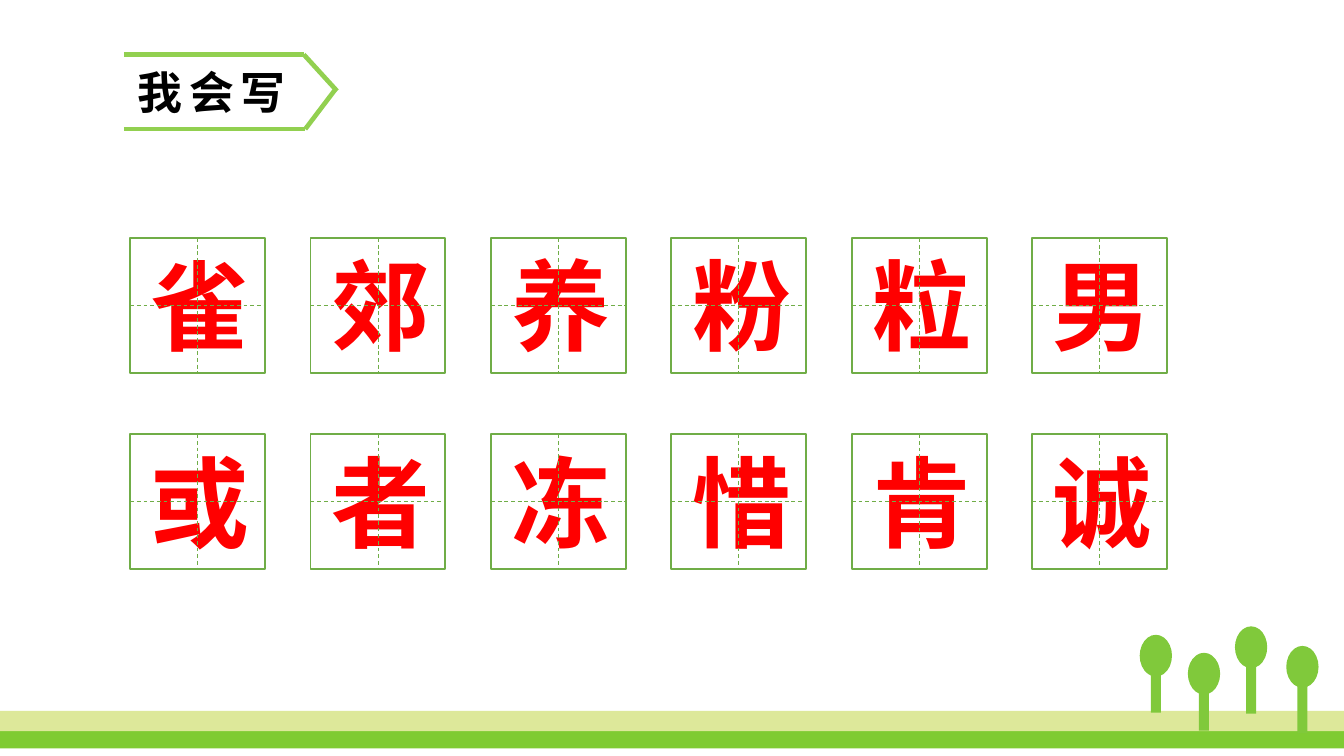
from pptx import Presentation
from pptx.dml.color import RGBColor
from pptx.enum.dml import MSO_LINE
from pptx.enum.shapes import MSO_CONNECTOR, MSO_SHAPE
from pptx.enum.text import MSO_ANCHOR, MSO_AUTO_SIZE, PP_ALIGN
from pptx.oxml.ns import qn
from pptx.util import Cm, Pt
from lxml.etree import SubElement

COLORS = {
    "grass": "7FCB32",
    "meadow": "DDE89A",
    "tree": "80C93B",
    "banner": "92D050",
    "grid": "70AD47",
    "character": "FF0000",
    "title": "000000",
    "white": "FFFFFF",
}
FONT = "Noto Sans CJK SC"


def write_text(shape, text, size, color):
    frame = shape.text_frame
    frame.auto_size = MSO_AUTO_SIZE.NONE
    frame.vertical_anchor = MSO_ANCHOR.MIDDLE
    para = frame.paragraphs[0]
    para.alignment = PP_ALIGN.LEFT
    span = para.add_run()
    span.text = text
    span.font.size = Pt(size)
    span.font.bold = True
    span.font.name = FONT
    span.font.color.rgb = RGBColor.from_string(COLORS[color])
    SubElement(span.font._element, qn("a:ea")).set("typeface", FONT)
    return span


def add_line(page, ends, color, width):
    line = page.shapes.add_connector(MSO_CONNECTOR.STRAIGHT, *[Cm(value) for value in ends])
    line.line.color.rgb = RGBColor.from_string(COLORS[color])
    line.line.width = Pt(width)
    SubElement(line._element.spPr, qn("a:effectLst"))
    return line


deck = Presentation()
deck.slide_width, deck.slide_height = Cm(25.4), Cm(14.29)
page = deck.slides.add_slide(deck.slide_layouts[5])
page.background.fill.solid()
page.background.fill.fore_color.rgb = RGBColor.from_string(COLORS["white"])

scenery = [
    (MSO_SHAPE.RECTANGLE, 0, 13.82, 25.4, 0.33, "grass"),
    (MSO_SHAPE.RECTANGLE, 0, 13.44, 25.4, 0.38, "meadow"),
]
for left, top, trunk_height in [
    (21.54, 12, 0.71),
    (22.45, 12.34, 0.71),
    (23.34, 11.84, 0.89),
    (24.31, 12.21, 0.89),
]:
    scenery.append((MSO_SHAPE.OVAL, left, top, 0.61, 0.79, "tree"))
    scenery.append((MSO_SHAPE.RECTANGLE, left + 0.21, top + 0.76, 0.19, trunk_height, "tree"))

for kind, left, top, width, height, color in scenery:
    shape = page.shapes.add_shape(kind, Cm(left), Cm(top), Cm(width), Cm(height))
    shape.shadow.inherit = False
    shape.fill.solid()
    shape.fill.fore_color.rgb = RGBColor.from_string(COLORS[color])
    shape.line.fill.background()

title = page.shapes.title
title.left, title.top, title.width, title.height = Cm(2.34), Cm(1.09), Cm(4.67), Cm(1.27)
span = write_text(title, "我会写", 24, "title")
span.font._element.set("spc", "380")

for ends in [
    (2.34, 1.03, 5.74, 1.03),
    (2.34, 2.44, 5.77, 2.44),
    (5.74, 1.03, 6.37, 1.72),
    (5.77, 2.44, 6.33, 1.7),
]:
    add_line(page, ends, "banner", 2.5)

grid_left, column_step, cell = 2.46, 3.41, 2.55
for row, characters in enumerate(["雀郊养粉粒男", "或者冻惜肯诚"]):
    top = 4.5 + row * 3.71
    for column, character in enumerate(characters):
        left = grid_left + column * column_step
        box = page.shapes.add_textbox(Cm(left + 0.14), Cm(top), Cm(2.41), Cm(2.51))
        box.text_frame.word_wrap = False
        write_text(box, character, 53, "character")

        square = page.shapes.add_shape(MSO_SHAPE.RECTANGLE, Cm(left), Cm(top), Cm(cell), Cm(cell))
        square.shadow.inherit = False
        square.fill.background()
        square.line.color.rgb = RGBColor.from_string(COLORS["grid"])
        square.line.width = Pt(1)

        middle_x, middle_y = left + cell / 2, top + cell / 2
        for ends, start, finish in [
            ((left, middle_y, left + cell, middle_y), 1, 3),
            ((middle_x, top, middle_x, top + cell), 0, 2),
        ]:
            guide = add_line(page, ends, "grid", 0.5)
            guide.line.dash_style = MSO_LINE.DASH
            guide.begin_connect(square, start)
            guide.end_connect(square, finish)

deck.save("out.pptx")
